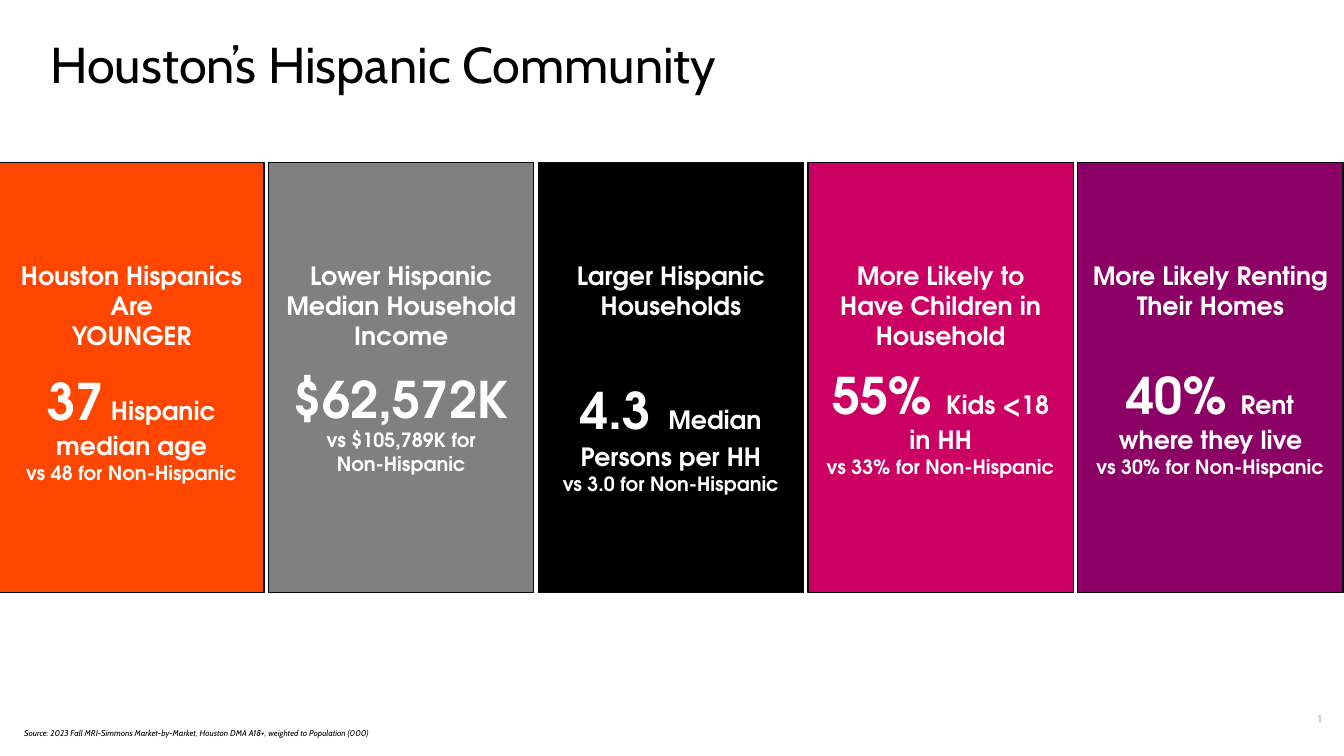
from pptx import Presentation
from pptx.dml.color import RGBColor
from pptx.enum.shapes import MSO_SHAPE
from pptx.enum.text import MSO_ANCHOR, PP_ALIGN
from pptx.util import Inches, Pt

RECT = MSO_SHAPE.RECTANGLE
TOP = MSO_ANCHOR.TOP
LEFT, CENTER, RIGHT = PP_ALIGN.LEFT, PP_ALIGN.CENTER, PP_ALIGN.RIGHT

BODY_FONT, PANEL_FONT = "Cabin", "TeX Gyre Adventor"
BIG, MEDIUM, SMALL = 36, 18, 14

# Panel grid: five equal columns
PANEL_LEFT, PANEL_PITCH = -0.01, 2.675
PANEL_TOP, PANEL_W, PANEL_H = 1.61, 2.63, 4.27
HEADLINE_TOP, HEADLINE_INSET = 2.53, 0.05

# Fill, headline paragraphs, figure top, figure inset,
# figure paragraphs as lists of (text, size)
PANELS = [
    ("FF4600", ["Houston Hispanics Are", "YOUNGER"], 3.62, 0.13,
     [[("37", BIG), (" Hispanic median age", MEDIUM)],
      [("vs 48 for Non-Hispanic", SMALL)]]),
    ("808080", ["Lower Hispanic Median Household Income"], 3.6, 0.09,
     [[("$62,572K", BIG)],
      [("vs $105,789K for", SMALL)],
      [("Non-Hispanic", SMALL)]]),
    ("000000", ["Larger Hispanic Households"], 3.6, 0,
     [[("4.3", BIG), (" ", 44), ("Median Persons per HH", MEDIUM)],
      [("vs 3.0 for Non-Hispanic", SMALL)]]),
    ("CC0062", ["More Likely to Have Children in Household"], 3.56, 0,
     [[("55% ", BIG), ("Kids <18", MEDIUM)],
      [("in HH", MEDIUM)],
      [("vs 33% for Non-Hispanic", SMALL)]]),
    ("8C0066", ["More Likely Renting Their Homes"], 3.56, 0,
     [[("40% ", BIG), ("Rent where they live", MEDIUM)],
      [("vs 30% for Non-Hispanic", SMALL)]]),
]


def rgb(value):
    return RGBColor.from_string(value)


def style(font, name, color, size=None, bold=False, italic=False):
    font.name, font.bold, font.italic = name, bold, italic
    font.color.rgb = rgb(color)
    if size:
        font.size = Pt(size)


def add_text(slide, box, paragraphs, align, name, color, **look):
    """Add a wrapped text box; each paragraph is a list of (text, size)."""
    tf = slide.shapes.add_textbox(*map(Inches, box)).text_frame
    tf.word_wrap = True
    for i, runs in enumerate(paragraphs):
        p = tf.paragraphs[0] if i == 0 else tf.add_paragraph()
        p.alignment = align
        style(p.font, name, color, runs[0][1], **look)
        for text, size in runs:
            r = p.add_run()
            r.text = text
            if size != runs[0][1]:
                r.font.size = Pt(size)


def add_title(slide, text):
    sp = slide.shapes.title
    sp.left, sp.top, sp.width, sp.height = map(Inches, (0.5, 0.33, 12, 0.61))
    tf = sp.text_frame
    tf.margin_left = tf.margin_top = tf.margin_right = tf.margin_bottom = 0
    tf.vertical_anchor = TOP
    tf.text = text
    p = tf.paragraphs[0]
    p.alignment = LEFT
    style(p.font, BODY_FONT, "000000", 36)


def add_panel(slide, column, fill, headline, figure_top, inset, figure):
    left = PANEL_LEFT + column * PANEL_PITCH
    sp = slide.shapes.add_shape(
        RECT, *map(Inches, (left, PANEL_TOP, PANEL_W, PANEL_H)))
    sp.shadow.inherit = False
    sp.fill.solid()
    sp.fill.fore_color.rgb = rgb(fill)
    sp.line.color.rgb = rgb("090811")
    sp.line.width = Pt(1)

    blocks = [
        (HEADLINE_TOP, HEADLINE_INSET, 1.01,
         [[(text, MEDIUM)] for text in headline]),
        (figure_top, inset, 1.25, figure),
    ]
    for top, margin, height, paragraphs in blocks:
        box = (left + margin, top, PANEL_W - 2 * margin, height)
        add_text(slide, box, paragraphs, CENTER, PANEL_FONT, "FFFFFF", bold=True)


def main():
    prs = Presentation()
    prs.slide_width, prs.slide_height = Inches(13.33), Inches(7.5)
    slide = prs.slides.add_slide(prs.slide_layouts[5])

    # Title
    add_title(slide, "Houston’s Hispanic Community")

    # Panels
    for column, panel in enumerate(PANELS):
        add_panel(slide, column, *panel)

    # Source line and page number
    source = ("Source: 2023 Fall MRI-Simmons Market-by-Market, "
              "Houston DMA A18+, weighted to Population (000)")
    add_text(slide, (0.14, 7.17, 6.24, 0.2), [[(source, 6)]],
             LEFT, BODY_FONT, "000000", italic=True)
    add_text(slide, (12.33, 7.02, 0.88, 0.27), [[("1", 8)]],
             RIGHT, BODY_FONT, "B5B5B5")

    prs.save("out.pptx")


if __name__ == "__main__":
    main()
